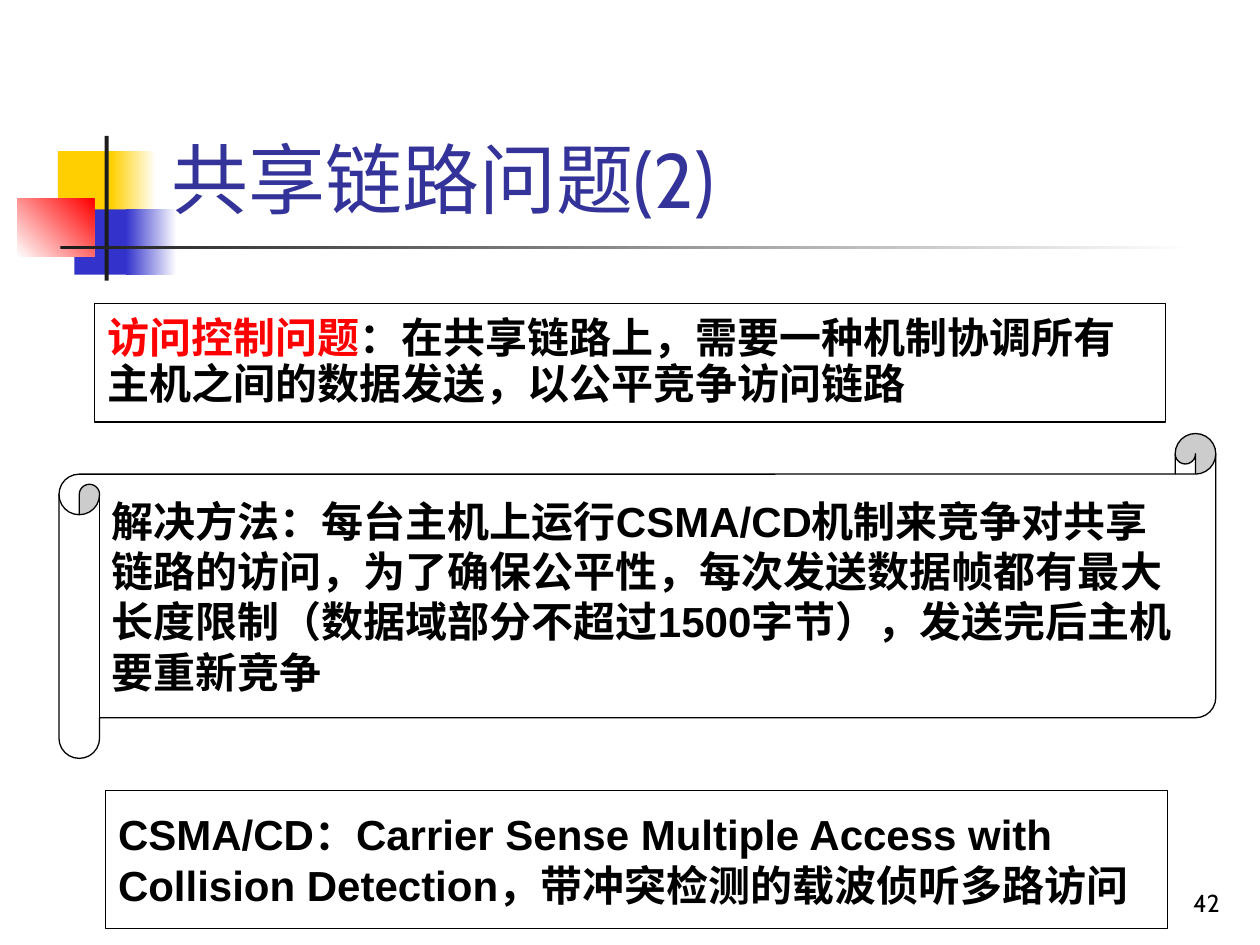
"""Build the slide on access control over a shared link."""
from pptx import Presentation
from pptx.dml.color import RGBColor
from pptx.enum import shapes, text
from pptx.util import Cm, Pt

YELLOW = RGBColor(0xFF, 0xCF, 0x01)
BLUE = RGBColor(0x33, 0x33, 0xCC)
RED = RGBColor(0xFF, 0x00, 0x00)
INK = RGBColor(0x1C, 0x1C, 0x1C)
TITLE = RGBColor(0x33, 0x33, 0x99)
BLACK = RGBColor(0x00, 0x00, 0x00)
WHITE = RGBColor(0xFF, 0xFF, 0xFF)
RECTANGLE = shapes.MSO_SHAPE.RECTANGLE
SCROLL = shapes.MSO_SHAPE.HORIZONTAL_SCROLL


def add_block(page, kind, place):
    block = page.shapes.add_shape(kind, *[Cm(length) for length in place])
    block.shadow.inherit = False
    return block


def add_span(para, words, size, face, color, bold=False):
    span = para.add_run()
    span.text = words
    span.font.size = Pt(size)
    span.font.name = face
    span.font.bold = bold
    span.font.color.rgb = color


deck = Presentation()
deck.slide_width, deck.slide_height = Cm(25.4), Cm(19.05)
page = deck.slides.add_slide(deck.slide_layouts[5])

ornaments = [
    ((1.17, 3.05, 1.22, 1.32), [YELLOW], 0),
    ((2.24, 3.05, 0.91, 1.32), [YELLOW, WHITE], 0),
    ((1.5, 4.22, 1.17, 1.32), [BLUE], 0),
    ((2.54, 4.22, 1.02, 1.32), [BLUE, WHITE], 0),
    ((0.35, 4.01, 1.55, 1.17), [WHITE, RED], 45),
    ((2.11, 2.74, 0.08, 2.92), [INK], 0),
    ((1.22, 4.95, 22.86, 0.08), [INK, WHITE], 0),
]
for place, colors, angle in ornaments:
    ornament = add_block(page, RECTANGLE, place)
    ornament.line.fill.background()
    if len(colors) == 1:
        ornament.fill.solid()
        ornament.fill.fore_color.rgb = colors[0]
    else:
        ornament.fill.gradient()
        ornament.fill.gradient_angle = angle
        for stop, color, position in zip(ornament.fill.gradient_stops, colors, (0, 1)):
            stop.color.rgb = color
            stop.position = position

title = page.shapes.title
page.shapes._spTree.append(title._element)
title.left, title.top, title.width, title.height = Cm(3.2), Cm(0.58), Cm(21.64), Cm(4.06)
number = page.shapes.add_textbox(Cm(19.56), Cm(17.35), Cm(5.28), Cm(1.27))
labels = [
    (title, "共享链路问题(2)", 44, TITLE, text.PP_ALIGN.LEFT),
    (number, "42", 14, BLACK, text.PP_ALIGN.RIGHT),
]
for box, words, size, color, alignment in labels:
    box.text_frame.word_wrap = True
    box.text_frame.vertical_anchor = text.MSO_ANCHOR.BOTTOM
    para = box.text_frame.paragraphs[0]
    para.alignment = alignment
    add_span(para, words, size, "Cabin", color)

statements = [
    (RECTANGLE, (1.91, 6.12, 21.59, 2.39), 0.9, [
        ("访问控制问题", RED),
        ("：在共享链路上，需要一种机制协调所有主机之间的数据发送，以公平竞争访问链路", BLACK),
    ]),
    (SCROLL, (1.19, 8.74, 23.32, 6.55), 1.0, [
        ("解决方法：每台主机上运行CSMA/CD机制来竞争对共享链路的访问，为了确保公平性，"
         "每次发送数据帧都有最大长度限制（数据域部分不超过1500字节），"
         "发送完后主机要重新竞争", BLACK),
    ]),
    (RECTANGLE, (2.13, 15.93, 21.41, 2.79), 1.0, [
        ("CSMA/CD：Carrier Sense Multiple Access with Collision Detection，"
         "带冲突检测的载波侦听多路访问", BLACK),
    ]),
]
for kind, place, spacing, spans in statements:
    box = add_block(page, kind, place)
    box.fill.solid()
    box.fill.fore_color.rgb = WHITE
    box.line.color.rgb = BLACK
    box.line.width = Pt(0.75)
    box.text_frame.word_wrap = True
    box.text_frame.vertical_anchor = text.MSO_ANCHOR.MIDDLE
    para = box.text_frame.paragraphs[0]
    para.alignment = text.PP_ALIGN.LEFT
    para.line_spacing = spacing
    for words, color in spans:
        add_span(para, words, 24, "Arial", color, bold=True)

deck.save("out.pptx")
